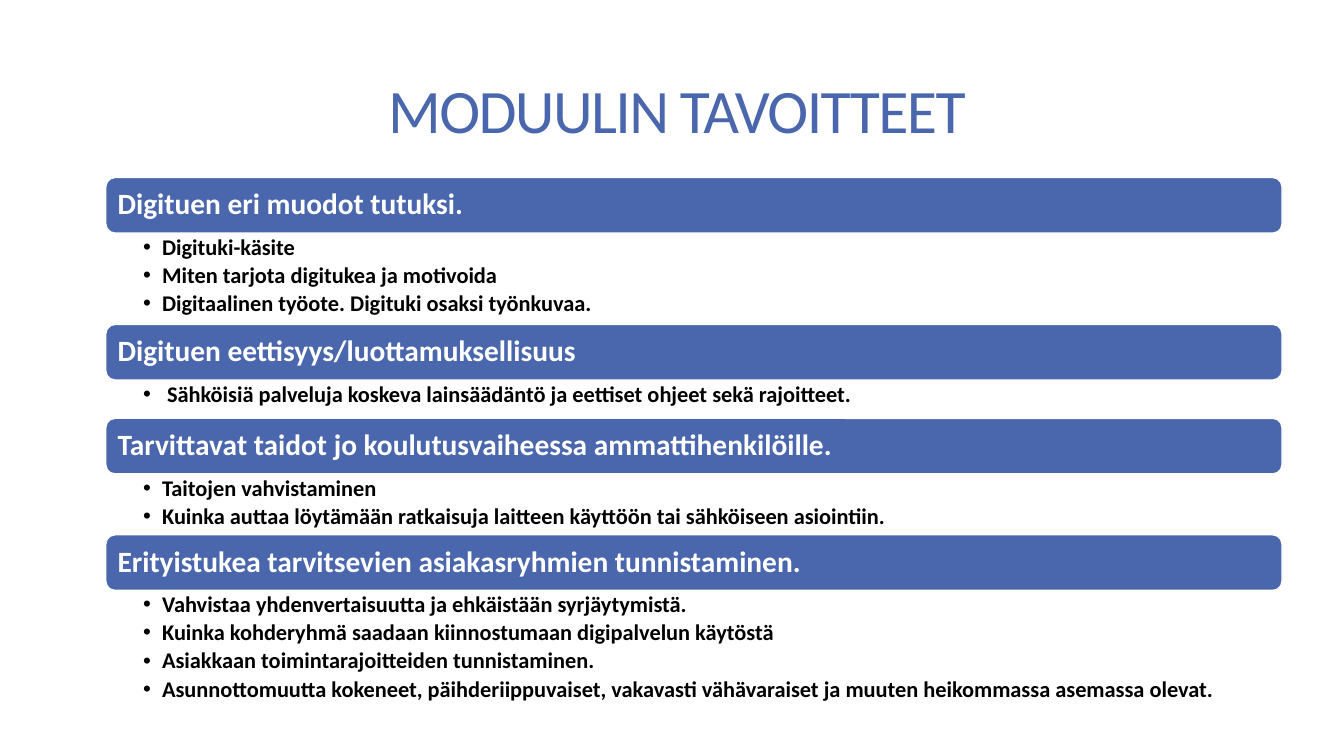
from dataclasses import dataclass

from lxml import etree
from pptx import Presentation
from pptx.dml.color import RGBColor
from pptx.enum.shapes import MSO_SHAPE
from pptx.enum.text import MSO_ANCHOR, PP_ALIGN
from pptx.oxml.ns import qn
from pptx.slide import Slide
from pptx.text.text import TextFrame, _Paragraph, _Run
from pptx.util import Pt

BLUE = RGBColor(0x4A, 0x66, 0xAC)
WHITE = RGBColor(0xFF, 0xFF, 0xFF)
BLACK = RGBColor(0x00, 0x00, 0x00)
ROUND = MSO_SHAPE.ROUNDED_RECTANGLE
MIDDLE = MSO_ANCHOR.MIDDLE
LEFT, CENTER = PP_ALIGN.LEFT, PP_ALIGN.CENTER

FONT = "Calibri"
EDGE, WIDTH = 75.6, 840.2
TOP, BAR = 126.8, 39.7
HANG = 13.5


@dataclass
class Goal:
    head: str
    items: list[str]
    room: float  # height of the bullet list, in points


GOALS = [
    Goal("Digituen eri muodot tutuksi.", [
        "Digituki-käsite",
        "Miten tarjota digitukea ja motivoida",
        "Digitaalinen työote. Digituki osaksi työnkuvaa.",
    ], 65.2),
    Goal("Digituen eettisyys/luottamuksellisuus", [
        " Sähköisiä palveluja koskeva lainsäädäntö ja eettiset ohjeet sekä rajoitteet.",
    ], 27.4),
    Goal("Tarvittavat taidot jo koulutusvaiheessa ammattihenkilöille.", [
        "Taitojen vahvistaminen",
        "Kuinka auttaa löytämään ratkaisuja laitteen käyttöön tai sähköiseen asiointiin.",
    ], 43.5),
    Goal("Erityistukea tarvitsevien asiakasryhmien tunnistaminen.", [
        "Vahvistaa yhdenvertaisuutta ja ehkäistään syrjäytymistä.",
        "Kuinka kohderyhmä saadaan kiinnostumaan digipalvelun käytöstä",
        "Asiakkaan toimintarajoitteiden tunnistaminen.",
        "Asunnottomuutta kokeneet, päihderiippuvaiset, vakavasti vähävaraiset "
        "ja muuten heikommassa asemassa olevat.",
    ], 87),
]


def add_run(para: _Paragraph, text: str, size: float, color: RGBColor,
            bold: bool = True) -> _Run:
    run = para.add_run()
    run.text = text
    run.font.name = FONT
    run.font.size = Pt(size)
    run.font.bold = bold
    run.font.color.rgb = color
    return run


def set_frame(frame: TextFrame, left: float, right: float, rim: float) -> None:
    """Wrap the text and set its insets; rim is the top and bottom one."""
    frame.word_wrap = True
    frame.margin_left, frame.margin_right = Pt(left), Pt(right)
    frame.margin_top = frame.margin_bottom = Pt(rim)


def add_bullet(para: _Paragraph) -> None:
    props = para._p.get_or_add_pPr()
    props.set("marL", str(Pt(HANG)))
    props.set("indent", str(-Pt(HANG)))
    etree.SubElement(props, qn("a:buFont")).set("typeface", "Arial")
    etree.SubElement(props, qn("a:buChar")).set("char", "•")


def add_title(slide: Slide, text: str) -> None:
    box = slide.shapes.add_textbox(Pt(76.3), Pt(31.7), Pt(814.3), Pt(101))
    frame = box.text_frame
    set_frame(frame, 7.2, 7.2, 3.6)
    frame.vertical_anchor = MIDDLE
    para = frame.paragraphs[0]
    para.alignment = CENTER
    para.line_spacing = 0.85
    run = add_run(para, text, 44.1, BLUE, False)
    run.font._element.set("spc", "-120")


def add_bar(slide: Slide, text: str, top: float) -> None:
    bar = slide.shapes.add_shape(ROUND, Pt(EDGE), Pt(top), Pt(WIDTH), Pt(BAR))
    bar.shadow.inherit = False
    bar.fill.solid()
    bar.fill.fore_color.rgb = BLUE
    bar.line.color.rgb = WHITE
    bar.line.width = Pt(1)
    frame = bar.text_frame
    set_frame(frame, 6.5, 6.5, 3.6)
    frame.vertical_anchor = MIDDLE
    para = frame.paragraphs[0]
    para.alignment = LEFT
    para.line_spacing = 0.9
    add_run(para, text, 21, WHITE)


def add_list(slide: Slide, goal: Goal, top: float) -> None:
    box = slide.shapes.add_textbox(Pt(EDGE), Pt(top), Pt(WIDTH), Pt(goal.room))
    frame = box.text_frame
    set_frame(frame, 26.7, 11.5, 2)
    for i, item in enumerate(goal.items):
        para = frame.add_paragraph() if i else frame.paragraphs[0]
        para.line_spacing = 0.9
        para.space_after = Pt(2.9)
        add_bullet(para)
        add_run(para, item, 16, BLACK)


def main() -> None:
    deck = Presentation()
    deck.slide_width, deck.slide_height = Pt(960), Pt(540)
    slide = deck.slides.add_slide(deck.slide_layouts[6])
    add_title(slide, "MODUULIN TAVOITTEET")
    top = TOP
    for goal in GOALS:
        add_bar(slide, goal.head, top)
        add_list(slide, goal, top + BAR)
        top += BAR + goal.room
    deck.save("out.pptx")


if __name__ == "__main__":
    main()
